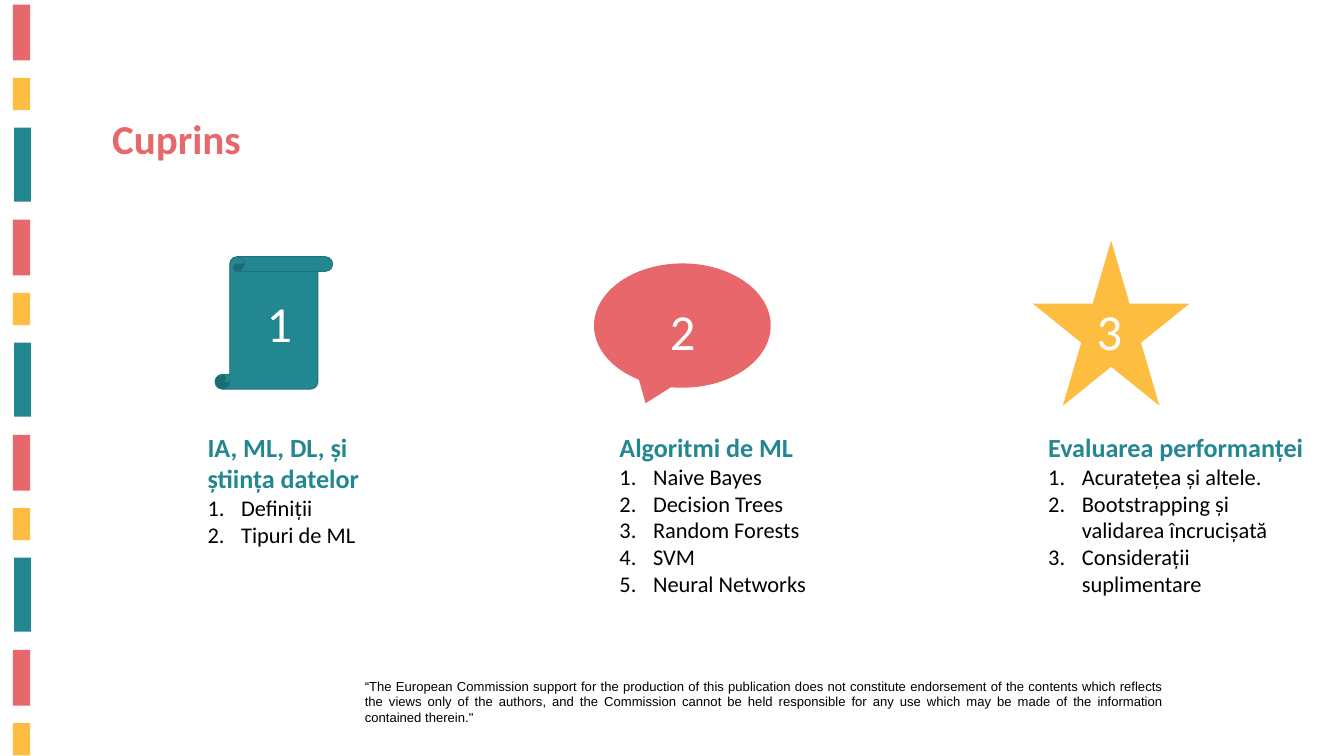
import pptx
import pptx.util
import pptx.dml.color
import pptx.enum.shapes
import pptx.enum.text
import lxml.etree
import pptx.oxml.ns

Inches, Pt = pptx.util.Inches, pptx.util.Pt
SHAPE = pptx.enum.shapes.MSO_SHAPE
ALIGN = pptx.enum.text.PP_ALIGN

COLORS = {"teal": "238791", "dark_teal": "1E737C", "coral": "E8676A",
          "title": "E7686A", "yellow": "FDBD40", "black": "000000", "white": "FFFFFF"}

TITLE = "Cuprins"
DISCLAIMER = (
    "“The European Commission support for the production of this publication does not "
    "constitute endorsement of the contents which reflects the views only of the authors, "
    "and the Commission cannot be held responsible for any use which may be made of the "
    "information contained therein.\"")

# Each box is left, top, width, height in inches
SECTIONS = [
    {"heading": "IA, ML, DL, și știința datelor",
     "items": ["Definiții", "Tipuri de ML"],
     "text_box": (2.99, 6.37, 3.13, 1.85),
     "icon": SHAPE.VERTICAL_SCROLL, "icon_box": (3.2, 3.82, 1.75, 1.97),
     "fill": "teal", "line": "dark_teal", "number_box": (3.87, 4.3, 1.58, 1.01)},
    {"heading": "Algoritmi de ML",
     "items": ["Naive Bayes", "Decision Trees", "Random Forests", "SVM", "Neural Networks"],
     "text_box": (9.12, 6.37, 3.38, 2.59),
     "icon": SHAPE.OVAL_CALLOUT, "icon_box": (8.84, 3.92, 2.63, 1.85),
     "fill": "coral", "line": None, "number_box": (9.87, 4.41, 1.08, 1.01)},
    {"heading": "Evaluarea performanței",
     "items": ["Acuratețea și altele.", "Bootstrapping și validarea încrucișată",
               "Considerații suplimentare"],
     "text_box": (15.5, 6.37, 4.09, 2.59),
     "icon": SHAPE.STAR_5_POINT, "icon_box": (15.37, 3.58, 2.33, 2.46),
     "fill": "yellow", "line": None, "number_box": (16.22, 4.41, 1.5, 1.01)},
]

# Side stripe: colour, left, first top, width, height, count
BARS = [("coral", 0.19, 0.07, 0.26, 0.83, 4),
        ("yellow", 0.19, 1.16, 0.26, 0.48, 4),
        ("teal", 0.21, 1.9, 0.25, 1.1, 3)]
BAR_PERIOD = 3.2

TITLE_FONT = {"name": "Calibri", "size": Pt(44), "bold": True}
HEADING_FONT = {"name": "Calibri", "size": Pt(28), "bold": True}
ITEM_FONT = {"name": "Calibri", "size": Pt(24), "bold": False}
NUMBER_FONT = {"name": "Calibri", "size": Pt(54)}
DISCLAIMER_FONT = {"name": "Arial", "size": Pt(14)}


def rgb(name):
    return pptx.dml.color.RGBColor.from_string(COLORS[name])


def add_filled(slide, kind, box, fill, line=None):
    s = slide.shapes.add_shape(kind, *map(Inches, box))
    s.shadow.inherit = False
    s.fill.solid()
    s.fill.fore_color.rgb = rgb(fill)
    if line:
        s.line.color.rgb = rgb(line)
        s.line.width = Pt(1)
    else:
        s.line.fill.background()


def add_text_frame(slide, box):
    tf = slide.shapes.add_textbox(*map(Inches, box)).text_frame
    tf.word_wrap = True
    return tf


def write(p, text, font, color):
    r = p.add_run()
    r.text = text
    for name, value in font.items():
        setattr(r.font, name, value)
    r.font.color.rgb = rgb(color)


def number_paragraph(p):
    """Give the paragraph a hanging indent and an automatic number."""
    qn = pptx.oxml.ns.qn
    pPr = p._p.get_or_add_pPr()
    pPr.set("marL", str(Inches(0.5)))
    pPr.set("indent", str(-Inches(0.5)))
    color = lxml.etree.SubElement(pPr, qn("a:buClr"))
    lxml.etree.SubElement(color, qn("a:srgbClr"), val=COLORS["black"])
    lxml.etree.SubElement(pPr, qn("a:buFont"), typeface="+mj-lt")
    lxml.etree.SubElement(pPr, qn("a:buAutoNum"), type="arabicPeriod")


def main():
    prs = pptx.Presentation()
    prs.slide_width, prs.slide_height = Inches(20), Inches(11.25)
    slide = prs.slides.add_slide(prs.slide_layouts[6])

    for color, left, top, width, height, count in BARS:
        for i in range(count):
            box = (left, top + i * BAR_PERIOD, width, height)
            add_filled(slide, SHAPE.RECTANGLE, box, color)

    p = add_text_frame(slide, (5.33, 10.04, 12.08, 0.81)).paragraphs[0]
    p.alignment = ALIGN.JUSTIFY
    write(p, DISCLAIMER, DISCLAIMER_FONT, "black")

    p = add_text_frame(slide, (1.57, 1.64, 6.77, 0.84)).paragraphs[0]
    write(p, TITLE, TITLE_FONT, "title")

    for number, section in enumerate(SECTIONS, 1):
        add_filled(slide, section["icon"], section["icon_box"],
                   section["fill"], section["line"])
        p = add_text_frame(slide, section["number_box"]).paragraphs[0]
        write(p, str(number), NUMBER_FONT, "white")

        tf = add_text_frame(slide, section["text_box"])
        write(tf.paragraphs[0], section["heading"], HEADING_FONT, "teal")
        for item in section["items"]:
            p = tf.add_paragraph()
            number_paragraph(p)
            write(p, item, ITEM_FONT, "black")

    prs.save("out.pptx")


if __name__ == "__main__":
    main()
